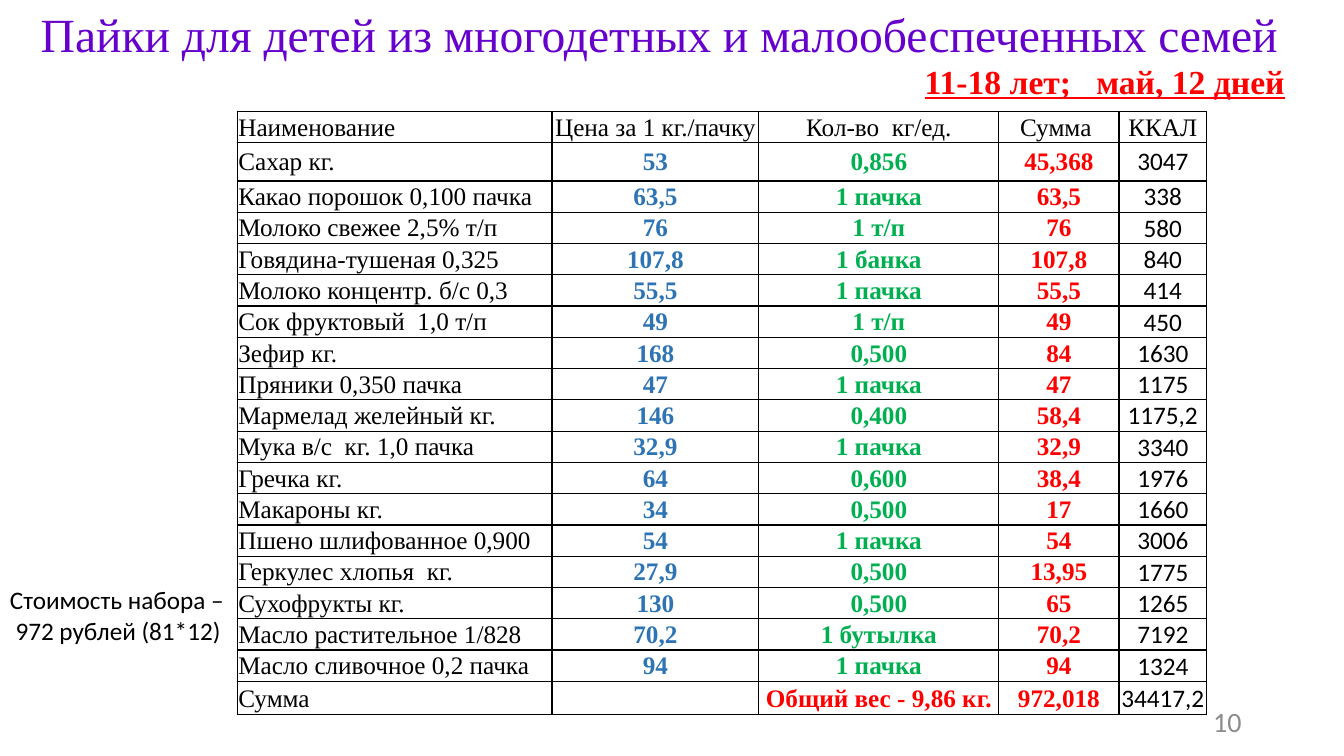
from lxml import etree
from pptx import Presentation
from pptx import util as u
from pptx.dml.color import RGBColor
from pptx.enum import text
from pptx.oxml import ns

COLORS = {"title": "6600CC", "red": "FF0000", "black": "000000",
          "blue": "2E74B5", "green": "00B050", "gray": "8C8C8C"}
SERIF, SANS = "Times New Roman", "Calibri"
LEFT, CENTER, RIGHT = text.PP_ALIGN.LEFT, text.PP_ALIGN.CENTER, text.PP_ALIGN.RIGHT
WIDTH, HEIGHT = u.Inches(13.33), u.Inches(7.5)

HEADER = ("Наименование", "Цена за 1 кг./пачку", "Кол-во  кг/ед.", "Сумма ", "ККАЛ")
PRODUCTS = [
    ("Сахар кг.", "53", "0,856", "45,368", "3047"),
    ("Какао порошок 0,100 пачка", "63,5", "1 пачка", "63,5", "338"),
    ("Молоко свежее 2,5% т/п", "76", "1 т/п", "76", "580"),
    ("Говядина-тушеная 0,325", "107,8", "1 банка", "107,8", "840"),
    ("Молоко концентр. б/с 0,3", "55,5", "1 пачка", "55,5", "414"),
    ("Сок фруктовый  1,0 т/п", "49", "1 т/п", "49", "450"),
    ("Зефир кг.", "168", "0,500", "84", "1630"),
    ("Пряники 0,350 пачка", "47", "1 пачка", "47", "1175"),
    ("Мармелад желейный кг.", "146", "0,400", "58,4", "1175,2"),
    ("Мука в/с  кг. 1,0 пачка", "32,9", "1 пачка", "32,9", "3340"),
    ("Гречка кг.", "64", "0,600", "38,4", "1976"),
    ("Макароны кг.", "34", "0,500", "17", "1660"),
    ("Пшено шлифованное 0,900", "54", "1 пачка", "54", "3006"),
    ("Геркулес хлопья  кг.", "27,9", "0,500", "13,95", "1775"),
    ("Сухофрукты кг.", "130", "0,500", "65", "1265"),
    ("Масло растительное 1/828", "70,2", "1 бутылка", "70,2", "7192"),
    ("Масло сливочное 0,2 пачка", "94", "1 пачка", "94", "1324"),
]
TOTAL = ("Сумма", "", "Общий вес - 9,86 кг.", "972,018", "34417,2")

COLUMN_WEIGHTS = (3.12, 2.05, 2.38, 1.19, 0.87)
ROW_WEIGHTS = (0.31, 0.38) + (0.31,) * 16 + (0.33,)
HEADER_COLORS = ("black",) * 5
PRODUCT_COLORS = ("black", "blue", "green", "red", "black")
TOTAL_COLORS = ("black", "black", "red", "red", "black")


def place(left, top, width, height):
    """Turn percentages of the slide into a box in EMU."""
    return tuple(round(share * side / 100) for share, side in
                 zip((left, top, width, height), (WIDTH, HEIGHT, WIDTH, HEIGHT)))


def write(tf, content, size=18, font=SERIF, color="black", bold=False,
          underline=False, align=LEFT, spacing=None, before=None):
    """Fill a text frame, one paragraph per line, in one format."""
    for i, line in enumerate(content.split("\n")):
        p = tf.add_paragraph() if i else tf.paragraphs[0]
        p.alignment = align
        if spacing:
            p.line_spacing = spacing
        if before:
            p.space_before = u.Pt(before)
        r = p.add_run()
        r.text = line
        r.font.size, r.font.name = u.Pt(size), font
        r.font.bold, r.font.underline = bold, underline
        r.font.color.rgb = RGBColor.from_string(COLORS[color])


def add_label(s, box, content, anchor=text.MSO_ANCHOR.TOP, **style):
    """Add a wrapped text box in the given box."""
    tf = s.shapes.add_textbox(*box).text_frame
    tf.word_wrap = True
    tf.vertical_anchor = anchor
    write(tf, content, **style)


def outline(cell):
    """Draw a thin black border round a cell and leave it unfilled."""
    props = cell._tc.get_or_add_tcPr()
    for side in ("lnL", "lnR", "lnT", "lnB"):
        line = etree.SubElement(props, ns.qn(f"a:{side}"), w=str(u.Pt(1)))
        fill = etree.SubElement(line, ns.qn("a:solidFill"))
        etree.SubElement(fill, ns.qn("a:srgbClr"), val=COLORS["black"])
    cell.fill.background()


def add_ration_table(s, box):
    """Add the price table, sharing its box among columns and rows."""
    rows = [HEADER, *PRODUCTS, TOTAL]
    palettes = [HEADER_COLORS] + [PRODUCT_COLORS] * len(PRODUCTS) + [TOTAL_COLORS]
    table = s.shapes.add_table(len(rows), len(HEADER), *box).table
    table.first_row = table.horz_banding = False
    for column, weight in zip(table.columns, COLUMN_WEIGHTS):
        column.width = round(box[2] * weight / sum(COLUMN_WEIGHTS))
    for row, weight in zip(table.rows, ROW_WEIGHTS):
        row.height = round(box[3] * weight / sum(ROW_WEIGHTS))
    for i, (values, palette) in enumerate(zip(rows, palettes)):
        for j, (value, color) in enumerate(zip(values, palette)):
            cell = table.cell(i, j)
            cell.margin_left = cell.margin_right = cell.margin_top = u.Inches(0.01)
            cell.margin_bottom = 0
            cell.vertical_anchor = text.MSO_ANCHOR.MIDDLE
            outline(cell)
            write(cell.text_frame, value, color=color, bold=color != "black",
                  font=SANS if i and j == 4 else SERIF,
                  align=CENTER if j else LEFT)


def add_headings(s, title_box, period_box):
    """Add the title and the age and period line."""
    add_label(s, title_box, "Пайки для детей из многодетных и малообеспеченных семей",
              anchor=text.MSO_ANCHOR.MIDDLE, size=34, color="title", spacing=0.9)
    add_label(s, period_box, "11-18 лет;   май, 12 дней", size=24, color="red",
              bold=True, underline=True, align=RIGHT, spacing=0.9, before=10)


def main():
    """Build and save the slide."""
    prs = Presentation()
    prs.slide_width, prs.slide_height = WIDTH, HEIGHT
    s = prs.slides.add_slide(prs.slide_layouts[6])
    add_headings(s, place(2.29, 0.67, 97.71, 8.53), place(66.39, 8, 29.93, 7.87))
    add_label(s, place(70.62, 92.73, 22.5, 5.33), "10", size=20, font=SANS,
              color="gray", align=RIGHT, anchor=text.MSO_ANCHOR.MIDDLE)
    add_label(s, place(0, 76.67, 35.26, 9.47),
              "Стоимость набора –\n 972 рублей (81*12)", font=SANS)
    add_ration_table(s, place(17.66, 14.73, 72.13, 79.81))
    prs.save("out.pptx")


if __name__ == "__main__":
    main()
